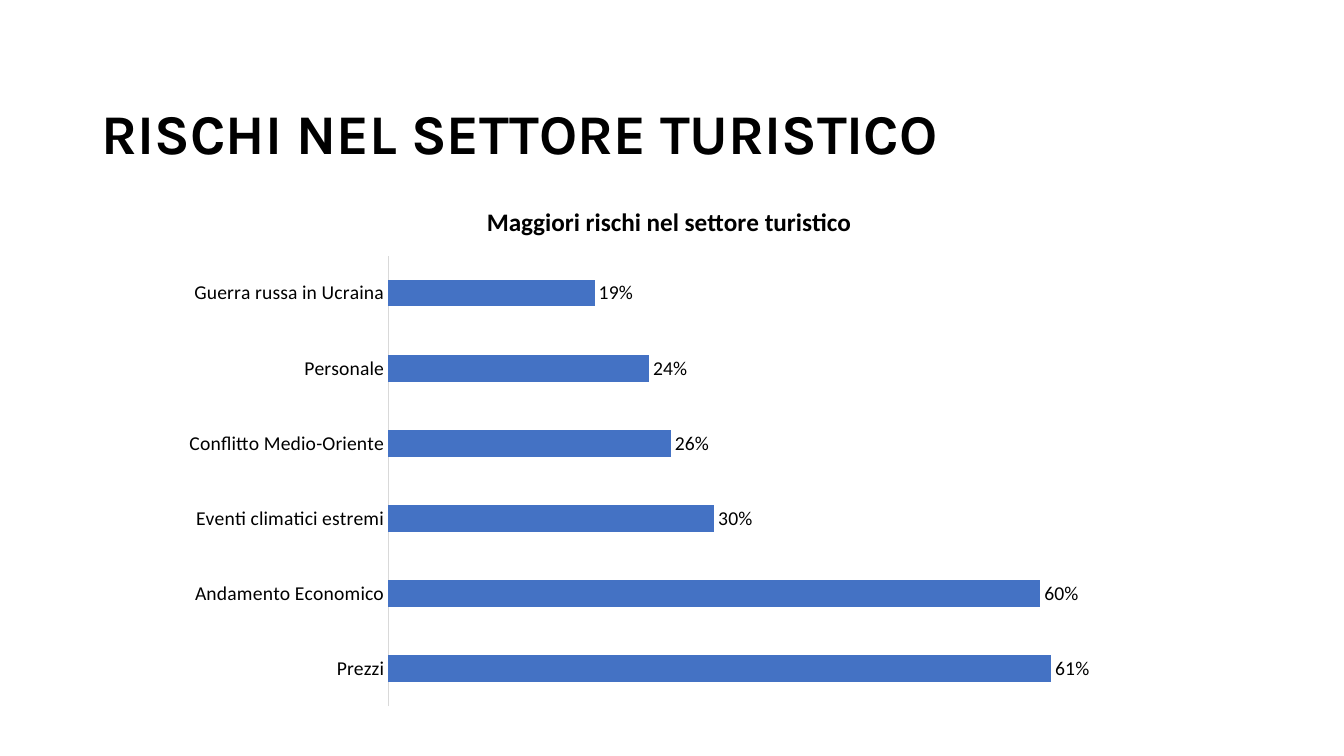
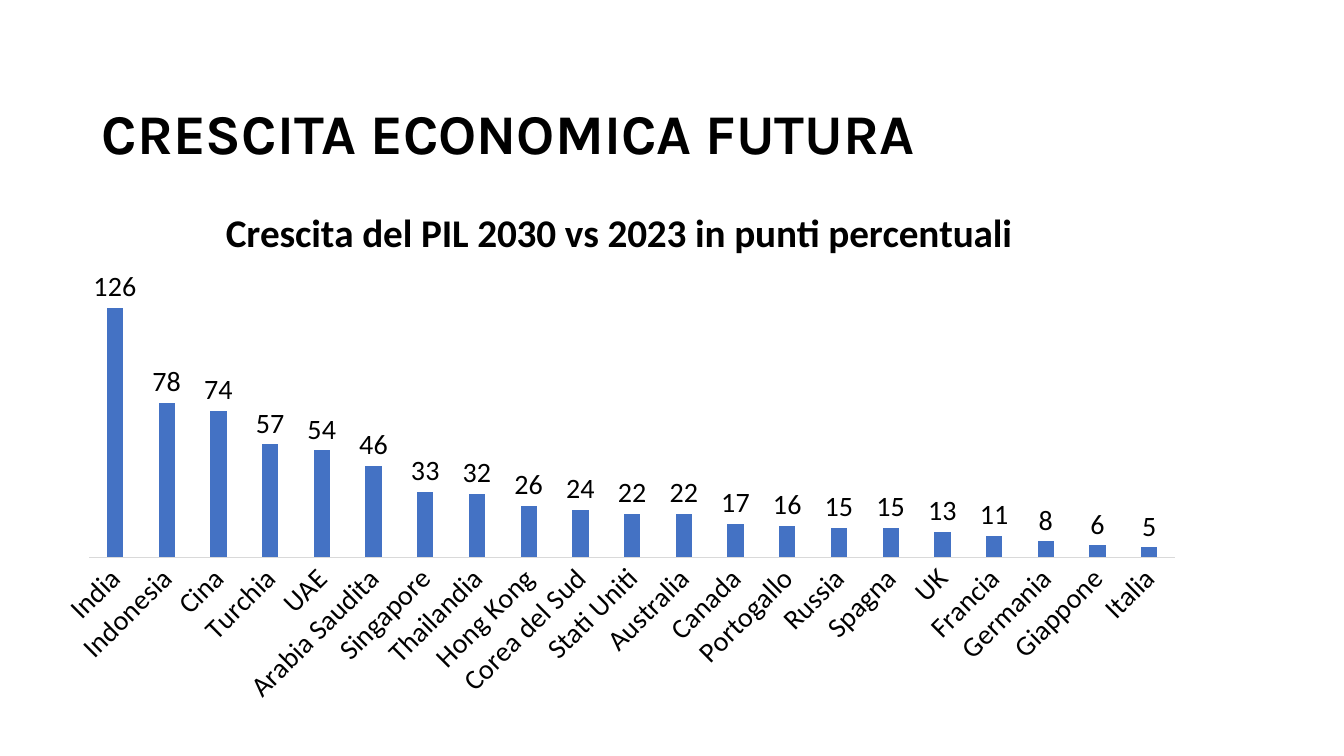
from dataclasses import dataclass

import pptx
import pptx.chart.data
import pptx.dml.color
import pptx.enum.chart
import pptx.enum.text
import pptx.util

Pt = pptx.util.Pt
ChartType = pptx.enum.chart.XL_CHART_TYPE

BLACK = pptx.dml.color.RGBColor(0x00, 0x00, 0x00)
BLUE = pptx.dml.color.RGBColor(0x44, 0x72, 0xC4)
GREY = pptx.dml.color.RGBColor(0xD9, 0xD9, 0xD9)
TITLE_FONT = "Karla"
CHART_FONT = "Calibri"
TITLE_ONLY = 5


@dataclass(frozen=True)
class ChartSlide:
    title: str
    chart_title: str
    chart_title_size: int
    kind: ChartType
    box: tuple[float, float, float, float]
    values: dict[str, float]
    number_format: str
    text_size: int
    gap: int
    overlap: int = 0
    label_angle: int = 0


SLIDES = [
    ChartSlide(
        title="RISCHI NEL SETTORE TURISTICO",
        chart_title="Maggiori rischi nel settore turistico",
        chart_title_size=18,
        kind=ChartType.BAR_CLUSTERED,
        box=(121, 131, 714, 381),
        values={
            "Prezzi": 0.61,
            "Andamento Economico": 0.60,
            "Eventi climatici estremi": 0.30,
            "Conflitto Medio-Oriente": 0.26,
            "Personale": 0.24,
            "Guerra russa in Ucraina": 0.19,
        },
        number_format="0%",
        text_size=14,
        gap=182,
    ),
    ChartSlide(
        title="CRESCITA ECONOMICA FUTURA",
        chart_title="Crescita del PIL 2030 vs 2023 in punti percentuali",
        chart_title_size=28,
        kind=ChartType.COLUMN_CLUSTERED,
        box=(28, 130.5, 828, 380),
        values={
            "India": 126, "Indonesia": 78, "Cina": 74, "Turchia": 57,
            "UAE": 54, "Arabia Saudita": 46, "Singapore": 33,
            "Thailandia": 32, "Hong Kong": 26, "Corea del Sud": 24,
            "Stati Uniti": 22, "Australia": 22, "Canada": 17,
            "Portogallo": 16, "Russia": 15, "Spagna": 15, "UK": 13,
            "Francia": 11, "Germania": 8, "Giappone": 6, "Italia": 5,
        },
        number_format="0",
        text_size=20,
        gap=219,
        overlap=-27,
        label_angle=-45,
    ),
]


def set_font(font: pptx.text.text.Font, name: str, size: float, bold: bool = False) -> None:
    font.name = name
    font.size = Pt(size)
    font.bold = bold
    font.color.rgb = BLACK


def add_title(s: pptx.slide.Slide, text: str) -> None:
    sp = s.shapes.title
    sp.left, sp.top, sp.width, sp.height = Pt(65.5), Pt(75), Pt(828), Pt(146)
    tf = sp.text_frame
    tf.text = text
    tf.word_wrap = True
    tf.auto_size = pptx.enum.text.MSO_AUTO_SIZE.NONE
    tf.vertical_anchor = pptx.enum.text.MSO_ANCHOR.TOP
    p = tf.paragraphs[0]
    p.alignment = pptx.enum.text.PP_ALIGN.LEFT
    p.line_spacing = Pt(40)
    set_font(p.font, TITLE_FONT, 40, bold=True)


def add_chart(s: pptx.slide.Slide, spec_data: ChartSlide) -> None:
    data = pptx.chart.data.CategoryChartData(number_format=spec_data.number_format)
    data.categories = list(spec_data.values)
    data.add_series("Series 1", list(spec_data.values.values()))
    box = [Pt(length) for length in spec_data.box]
    chart = s.shapes.add_chart(spec_data.kind, *box, data).chart
    set_font(chart.font, CHART_FONT, spec_data.text_size)
    chart.has_legend = False

    chart.has_title = True
    p = chart.chart_title.text_frame.paragraphs[0]
    p.text = spec_data.chart_title
    set_font(p.font, CHART_FONT, spec_data.chart_title_size, bold=True)
    chart.chart_title.include_in_layout = False

    category_axis = chart.category_axis
    category_axis.major_tick_mark = pptx.enum.chart.XL_TICK_MARK.NONE
    category_axis.format.line.color.rgb = GREY
    category_axis.format.line.width = Pt(0.75)
    set_font(category_axis.tick_labels.font, CHART_FONT, spec_data.text_size)
    if spec_data.label_angle:
        body = category_axis._element.txPr.bodyPr
        body.set("rot", str(spec_data.label_angle * 60000))
        body.set("vert", "horz")

    value_axis = chart.value_axis
    value_axis.visible = False
    value_axis.has_major_gridlines = False
    value_axis.minimum_scale = 0

    plot = chart.plots[0]
    plot.vary_by_categories = False
    plot.gap_width = spec_data.gap
    plot.overlap = spec_data.overlap
    fill = plot.series[0].format.fill
    fill.solid()
    fill.fore_color.rgb = BLUE

    plot.has_data_labels = True
    labels = plot.data_labels
    labels.show_value = True
    labels.number_format = spec_data.number_format
    labels.number_format_is_linked = False
    labels.position = pptx.enum.chart.XL_LABEL_POSITION.OUTSIDE_END
    set_font(labels.font, CHART_FONT, spec_data.text_size)


def main() -> None:
    prs = pptx.Presentation()
    prs.slide_width, prs.slide_height = Pt(960), Pt(540)
    for content in SLIDES:
        s = prs.slides.add_slide(prs.slide_layouts[TITLE_ONLY])
        add_title(s, content.title)
        add_chart(s, content)
    prs.save("out.pptx")


if __name__ == "__main__":
    main()
